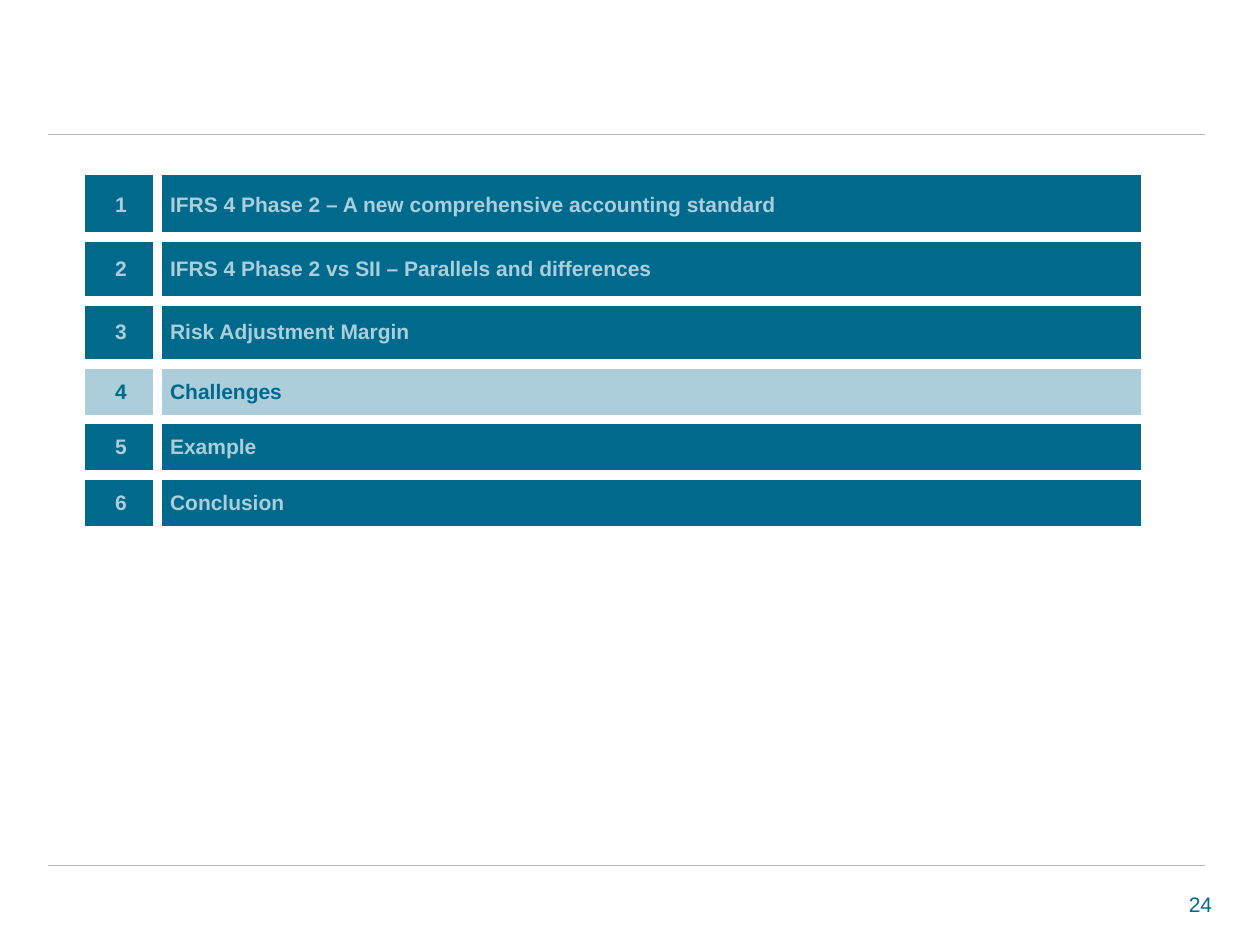
"""Build an agenda slide with the fourth topic highlighted."""
from lxml import etree
from pptx import Presentation
from pptx.dml.color import RGBColor
from pptx.enum.shapes import MSO_CONNECTOR
from pptx.enum.text import MSO_ANCHOR, PP_ALIGN
from pptx.oxml.ns import qn
from pptx.util import Inches, Pt

STRAIGHT = MSO_CONNECTOR.STRAIGHT
MIDDLE = MSO_ANCHOR.MIDDLE
LEFT, CENTER, RIGHT = PP_ALIGN.LEFT, PP_ALIGN.CENTER, PP_ALIGN.RIGHT
TEAL, PALE, GREY, WHITE = "006A8D", "ABCEDA", "B7B8B1", "FFFFFF"
TOPICS = [
    ("IFRS 4 Phase 2 – A new comprehensive accounting standard", 0.5),
    ("IFRS 4 Phase 2 vs SII – Parallels and differences", 0.51),
    ("Risk Adjustment Margin", 0.5),
    ("Challenges", 0.44),
    ("Example", 0.44),
    ("Conclusion", 0.44),
]
CURRENT = 3
HANGING = Inches(0.38)


def color(value):
    return RGBColor.from_string(value)


def add_text(paragraph, text, text_color, align, bold=False):
    paragraph.alignment = align
    run = paragraph.add_run()
    run.text = text
    run.font.name = "Arial"
    run.font.size = Pt(12)
    run.font.bold = bold
    run.font.color.rgb = color(text_color)


prs = Presentation()
prs.slide_width, prs.slide_height = Inches(10), Inches(7.5)
slide = prs.slides.add_slide(prs.slide_layouts[6])

for y in (1.07, 6.87):
    rule = slide.shapes.add_connector(STRAIGHT, Inches(0.38), Inches(y), Inches(9.56), Inches(y))
    rule.line.color.rgb = color(GREY)
    rule.line.width = Pt(0.75)
    etree.SubElement(rule._element.spPr, qn("a:effectLst"))

page_number = slide.shapes.add_textbox(Inches(7.44), Inches(7.03), Inches(2.18), Inches(0.3)).text_frame
page_number.word_wrap = True
page_number.margin_right = 0
add_text(page_number.paragraphs[0], "24", TEAL, RIGHT)

agenda = slide.shapes.add_table(
    len(TOPICS), 2, Inches(0.67), Inches(1.38), Inches(8.39), Inches(2.83)
).table
agenda.first_row = agenda.horz_banding = False
agenda.columns[0].width = Inches(0.58)
agenda.columns[1].width = Inches(7.81)

for row, (topic, height) in enumerate(TOPICS):
    agenda.rows[row].height = Inches(height)
    fill, text_color = (PALE, TEAL) if row == CURRENT else (TEAL, PALE)
    for column, (text, align) in enumerate([(str(row + 1), CENTER), (topic, LEFT)]):
        cell = agenda.cell(row, column)
        cell.vertical_anchor = MIDDLE
        paragraph = cell.text_frame.paragraphs[0]
        add_text(paragraph, text, text_color, align, bold=True)
        if column == 0 or row <= CURRENT:
            properties = paragraph._p.get_or_add_pPr()
            properties.set("marL", str(HANGING))
            properties.set("indent", str(-HANGING))

        borders = {
            "a:lnL": 6 if column else 1,
            "a:lnR": 1 if column else 6,
            "a:lnT": 6 if row else 1,
            "a:lnB": 6,
        }
        for side, width in borders.items():
            border = etree.SubElement(cell._tc.get_or_add_tcPr(), qn(side), w=str(Pt(width)))
            paint = etree.SubElement(border, qn("a:solidFill"))
            etree.SubElement(paint, qn("a:srgbClr"), val=WHITE)
        cell.fill.solid()
        cell.fill.fore_color.rgb = color(fill)

prs.save("out.pptx")
